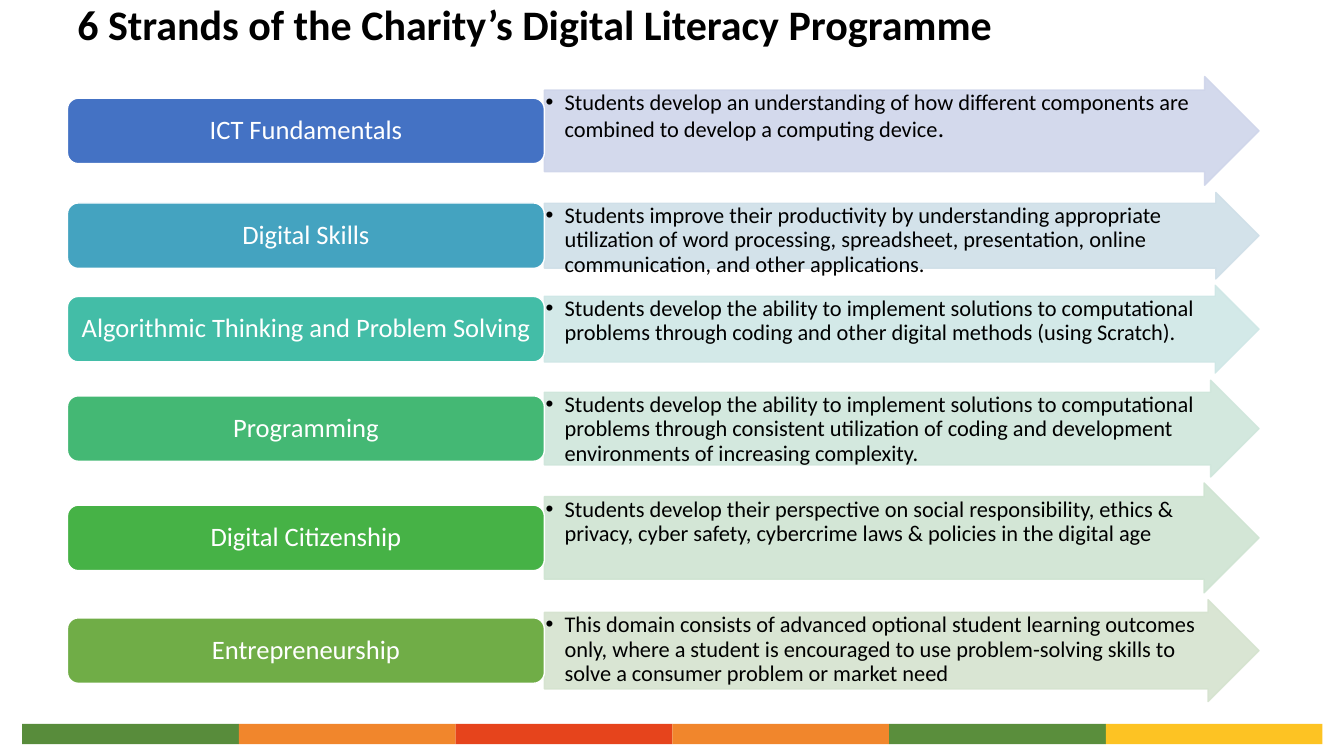
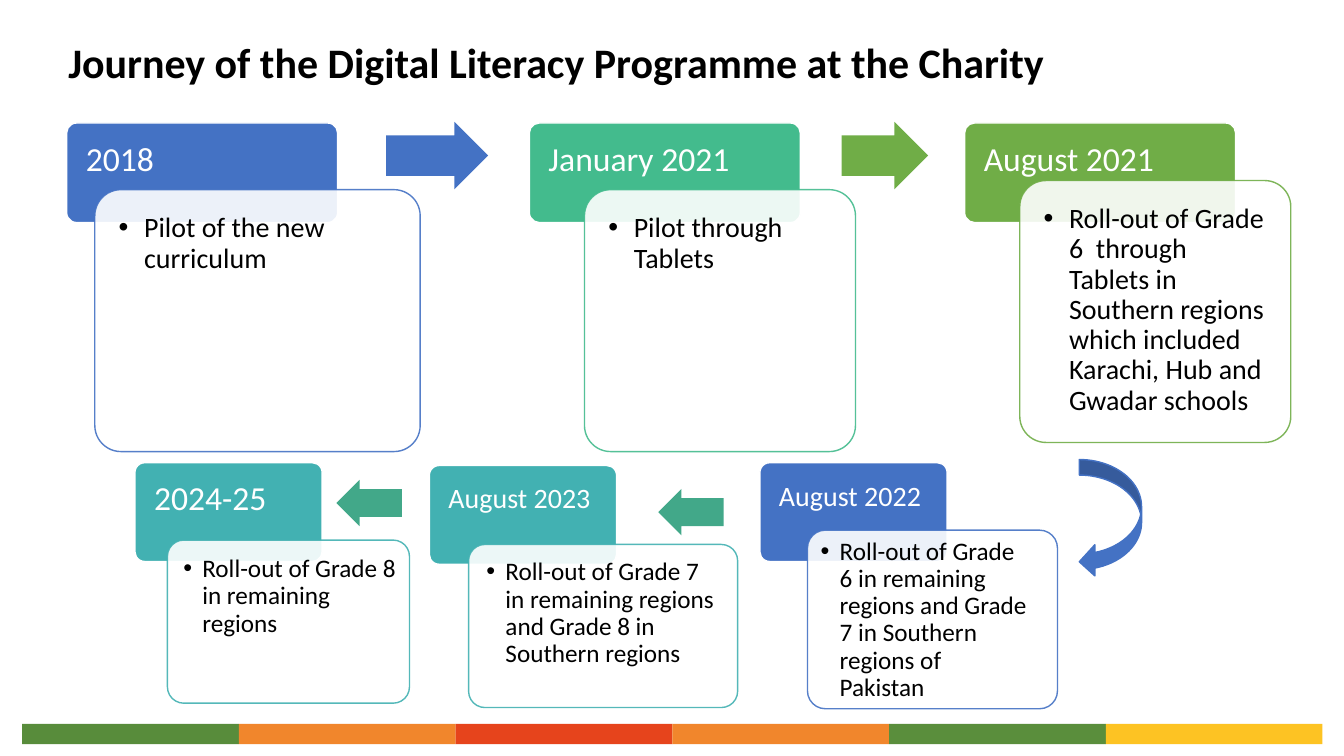
from lxml import etree
from pptx import Presentation
from pptx.dml.color import RGBColor
from pptx.enum.shapes import MSO_SHAPE
from pptx.enum.text import MSO_ANCHOR, PP_ALIGN
from pptx.oxml.ns import qn
from pptx.util import Cm, Pt

RECT, ROUND = MSO_SHAPE.RECTANGLE, MSO_SHAPE.ROUNDED_RECTANGLE
RIGHT, LEFT = MSO_SHAPE.RIGHT_ARROW, MSO_SHAPE.LEFT_ARROW
CURVED = MSO_SHAPE.CURVED_LEFT_ARROW
TOP, MIDDLE = MSO_ANCHOR.TOP, MSO_ANCHOR.MIDDLE
ALIGN_LEFT, ALIGN_CENTER = PP_ALIGN.LEFT, PP_ALIGN.CENTER

FONT = "Calibri"
BLACK = RGBColor(0x00, 0x00, 0x00)
WHITE = RGBColor(0xFF, 0xFF, 0xFF)
BLUE = RGBColor(0x44, 0x72, 0xC4)
SKY = RGBColor(0x44, 0xA3, 0xC0)
TURQUOISE = RGBColor(0x43, 0xBD, 0xA7)
EMERALD = RGBColor(0x44, 0xB8, 0x74)
GREEN = RGBColor(0x46, 0xB2, 0x46)
OLIVE = RGBColor(0x70, 0xAD, 0x47)
MINT = RGBColor(0x43, 0xBB, 0x8D)
TEAL = RGBColor(0x42, 0xB1, 0xB2)
SEA = RGBColor(0x42, 0xA8, 0x89)
PALE_BLUE = RGBColor(0xCF, 0xD5, 0xEA)
PALE_SKY = RGBColor(0xCF, 0xDF, 0xE8)
PALE_TURQUOISE = RGBColor(0xCF, 0xE7, 0xE6)
PALE_EMERALD = RGBColor(0xCF, 0xE6, 0xDB)
PALE_GREEN = RGBColor(0xCF, 0xE4, 0xD2)
PALE_OLIVE = RGBColor(0xD5, 0xE3, 0xCF)
BAND_LEAF = RGBColor(0x58, 0x8C, 0x3B)
BAND_ORANGE = RGBColor(0xF1, 0x86, 0x2C)
BAND_RED = RGBColor(0xE6, 0x44, 0x1C)
BAND_GREEN = RGBColor(0x5A, 0x8E, 0x3C)
BAND_YELLOW = RGBColor(0xFD, 0xC3, 0x23)
BANDS = [BAND_LEAF, BAND_ORANGE, BAND_RED, BAND_ORANGE, BAND_GREEN, BAND_YELLOW]

STRANDS = [
    (1.93, 2.74, BLUE, PALE_BLUE, "ICT Fundamentals",
     "Students develop an understanding of how different components are "
     "combined to develop a computing device", "."),
    (4.85, 2.18, SKY, PALE_SKY, "Digital Skills",
     "Students improve their productivity by understanding appropriate "
     "utilization of word processing, spreadsheet, presentation, online "
     "communication, and other applications.", ""),
    (7.19, 2.21, TURQUOISE, PALE_TURQUOISE,
     "Algorithmic Thinking and Problem Solving",
     "Students develop the ability to implement solutions to computational "
     "problems through coding and other digital methods (using Scratch).", ""),
    (9.58, 2.44, EMERALD, PALE_EMERALD, "Programming",
     "Students develop the ability to implement solutions to computational "
     "problems through consistent utilization of coding and development "
     "environments of increasing complexity.", ""),
    (12.17, 2.77, GREEN, PALE_GREEN, "Digital Citizenship",
     "Students develop their perspective on social responsibility, ethics & "
     "privacy, cyber safety, cybercrime laws & policies in the digital age", ""),
    (15.11, 2.57, OLIVE, PALE_OLIVE, "Entrepreneurship",
     "This domain consists of advanced optional student learning outcomes "
     "only, where a student is encouraged to use problem-solving skills to "
     "solve a consumer problem or market need", ""),
]

BIG_INSETS = (0.41, 0.41, 0.41, 0.41)
BIG_STYLE = {"size": 20, "indent": 0.64, "insets": BIG_INSETS}
UPPER_MILESTONES = [
    ((1.68, 3.1, 6.83, 2.51), (0.71, 1.68, 8.2, 6.6), BLUE, "2018", 24,
     "Pilot of the new curriculum", BIG_STYLE),
    ((13.34, 3.1, 6.83, 2.51), (1.39, 1.68, 6.83, 6.6), MINT, "January 2021", 24,
     "Pilot through Tablets", BIG_STYLE),
    ((24.31, 3.1, 6.83, 2.51), (1.39, 1.45, 6.83, 6.6), OLIVE, "August 2021", 24,
     "Roll-out of Grade 6  through Tablets in Southern regions which included "
     "Karachi, Hub and Gwadar schools", BIG_STYLE),
]
LOWER_MILESTONES = [
    ((19.15, 11.66, 4.72, 2.49), (1.2, 1.7, 6.3, 4.5), BLUE, "August 2022", 20,
     "Roll-out of Grade 6 in remaining regions and Grade 7 in Southern regions "
     "of Pakistan", {"insets": (0.2, 0.08, 0.6, 0)}),
    ((10.82, 11.73, 4.72, 2.49), (0.99, 1.99, 6.78, 4.11), TEAL, "August 2023", 20,
     "Roll-out of Grade 7 in remaining regions and Grade 8 in Southern regions",
     {"insets": (0.33, 0.25, 0.23, 0)}),
    ((3.4, 11.66, 4.72, 2.49), (0.82, 1.95, 6.1, 4.11), TEAL, "2024-25", 24,
     "Roll-out of Grade 8 in remaining regions", {"insets": (0.28, 0.28, 0, 0)}),
]
ARROWS = [
    (RIGHT, (9.73, 3.07, 2.57, 1.7), BLUE),
    (RIGHT, (21.21, 3.07, 2.18, 1.7), OLIVE),
    (LEFT, (16.59, 12.32, 1.65, 1.17), SEA),
    (LEFT, (8.48, 12.09, 1.65, 1.17), SEA),
]


def set_alpha(fill, percent):
    """Give a solid fill the stated opacity."""
    for clr in fill._xPr.iter(qn("a:srgbClr")):
        etree.SubElement(clr, qn("a:alpha")).set("val", str(percent * 1000))


def add_box(slide, kind, box, color, line=None, adj=(), alpha=None):
    """Add a flat preset shape at a box in centimetres."""
    sp = slide.shapes.add_shape(kind, *map(Cm, box))
    sp.shadow.inherit = False
    sp.fill.solid()
    sp.fill.fore_color.rgb = color
    if line is None:
        sp.line.fill.background()
    else:
        sp.line.color.rgb = line
        sp.line.width = Pt(1)
    for i, value in enumerate(adj):
        sp.adjustments[i] = value
    if alpha:
        set_alpha(sp.fill, alpha)
    return sp


def write(sp, text, size=18, color=BLACK, bold=False, align=ALIGN_LEFT, anchor=TOP,
          insets=(0.25, 0.13, 0.25, 0.13), indent=0, tail="", tail_size=18):
    """Fill a shape with one formatted paragraph, bulleted when indented."""
    tf = sp.text_frame
    tf.word_wrap = True
    tf.vertical_anchor = anchor
    tf.margin_left, tf.margin_top, tf.margin_right, tf.margin_bottom = map(Cm, insets)
    p = tf.paragraphs[0]
    p.alignment = align
    p.line_spacing = 0.9
    for part, points in ((text, size), (tail, tail_size)):
        if part:
            r = p.add_run()
            r.text = part
            r.font.name = FONT
            r.font.size = Pt(points)
            r.font.bold = bold
            r.font.color.rgb = color
    if indent:
        pPr = p._p.get_or_add_pPr()
        pPr.set("marL", str(Cm(indent)))
        pPr.set("indent", str(-Cm(indent)))
        etree.SubElement(pPr, qn("a:buFont")).set("typeface", "Arial")
        etree.SubElement(pPr, qn("a:buChar")).set("char", "•")


def add_bands(slide, box):
    """Draw the footer strip of equal colour bands."""
    x, y, w, h = box
    step = w / len(BANDS)
    for i, color in enumerate(BANDS):
        add_box(slide, RECT, (x + i * step, y, step, h), color)


def new_slide(prs, title, x, y):
    """Add a slide with the shared title style and footer."""
    slide = prs.slides.add_slide(prs.slide_layouts[5])
    add_bands(slide, (0.56, 18.24, 32.77, 0.51))
    sp = slide.shapes.title
    sp.left, sp.top, sp.width, sp.height = map(Cm, (x, y, 30.48, 1.65))
    write(sp, title, size=30, bold=True, anchor=MIDDLE)
    return slide


def add_strand(slide, box, color, pale, name, text, tail):
    """Draw one strand: a label and the arrow that describes it."""
    x, y, w, h = box
    label_w, label_h = 12.02, 1.65
    sp = add_box(slide, RIGHT, (x + label_w, y, w - label_w, h), pale, line=pale,
                 adj=(0.75, 0.5), alpha=90)
    set_alpha(sp.line.fill, 90)
    write(sp, text, size=16, indent=0.48, insets=(0.03,) * 4, tail=tail)
    sp = add_box(slide, ROUND, (x, y + (h - label_h) / 2, label_w, label_h), color,
                 line=WHITE)
    write(sp, name, size=19, color=WHITE, align=ALIGN_CENTER, anchor=MIDDLE,
          insets=(0.2, 0.1, 0.2, 0.1))


def add_milestone(slide, box, card, color, date, date_size, text, style):
    """Draw a dated tab with its card offset from the tab's corner."""
    x, y = box[:2]
    dx, dy, w, h = card
    sp = add_box(slide, ROUND, box, color, line=WHITE, adj=(0.1,))
    write(sp, date, size=date_size, color=WHITE, insets=(0.41, 0.41, 0, 0))
    sp = add_box(slide, ROUND, (x + dx, y + dy, w, h), WHITE, line=color,
                 adj=(0.1,), alpha=90)
    write(sp, text, **{"size": 18, "indent": 0.48, **style})


def build_strands(prs):
    """Build the slide of six strands."""
    slide = new_slide(prs, "6 Strands of the Charity’s Digital Literacy Programme",
                      1.7, -0.15)
    for y, h, *strand in STRANDS:
        add_strand(slide, (1.7, y, 30.03, h), *strand)


def build_journey(prs):
    """Build the timeline slide."""
    slide = new_slide(prs, "Journey of the Digital Literacy Programme at the Charity",
                      1.47, 0.81)
    for milestone in UPPER_MILESTONES + LOWER_MILESTONES:
        add_milestone(slide, *milestone)
    for kind, box, color in ARROWS:
        add_box(slide, kind, box, color, adj=(0.6, 0.5))
    add_box(slide, CURVED, (27.2, 11.58, 1.57, 2.97), BLUE, line=BLUE)


def main():
    """Build and save the presentation."""
    prs = Presentation()
    prs.slide_width, prs.slide_height = Cm(33.87), Cm(19.05)
    build_strands(prs)
    build_journey(prs)
    prs.save("out.pptx")


if __name__ == "__main__":
    main()
